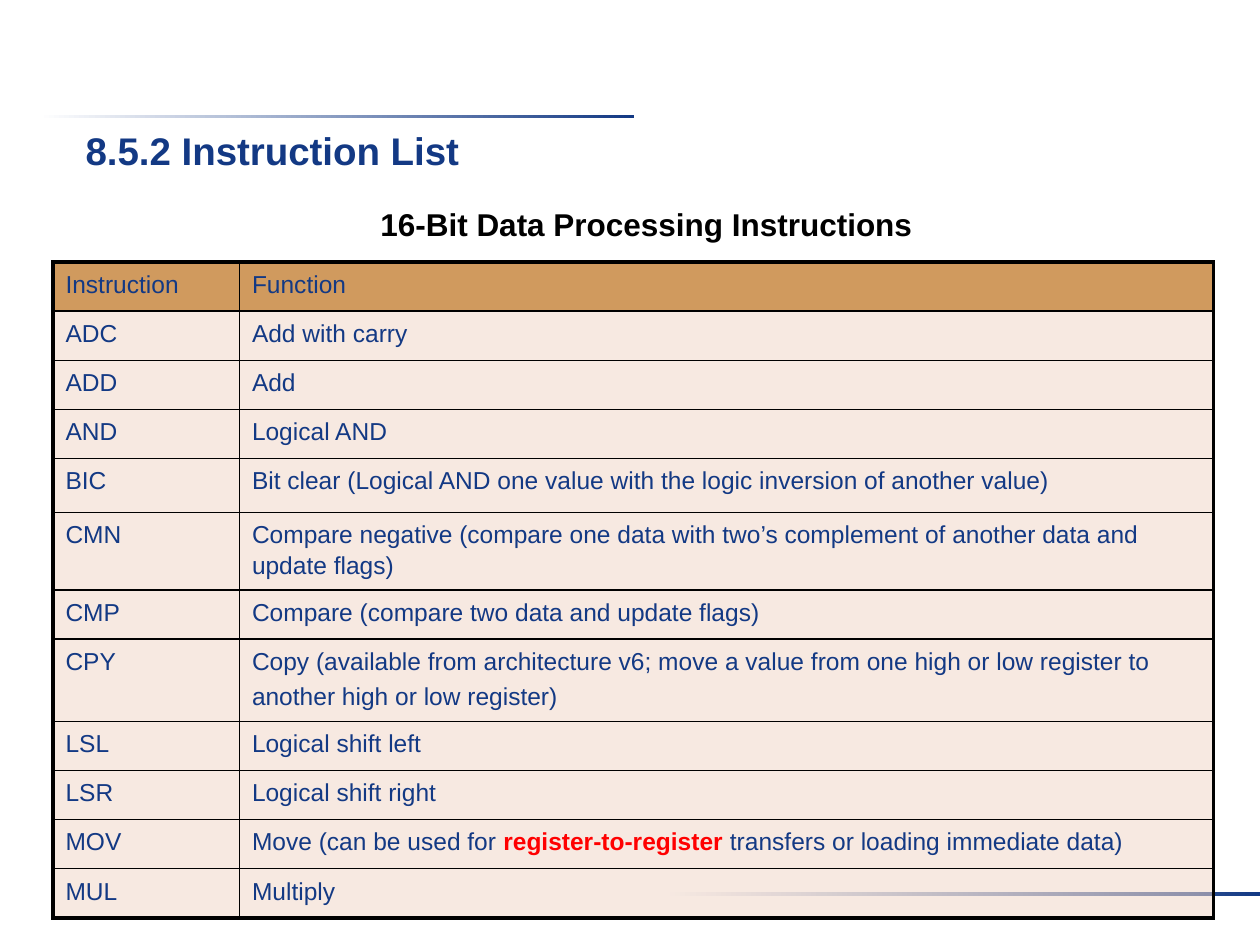
from lxml import etree
from pptx import Presentation
from pptx.dml.color import RGBColor
from pptx.enum import shapes, text
from pptx.oxml.ns import qn
from pptx.util import Inches, Pt

NAVY, BLACK, RED, WHITE = "133984", "000000", "FF0000", "FFFFFF"
HEADER_FILL, BODY_FILL = "D09A5E", "F1D5C5"
THIN, THICK = Pt(1), Pt(2.25)
ROW_HEIGHT = 0.39
TALL_ROWS = {"BIC": 0.43, "CMN": 0.61, "CPY": 0.65}

# A function is a list of paragraphs, each a list of (text, emphasised) runs.
INSTRUCTIONS = [
    ("Instruction", [[("Function", False)]]),
    ("ADC", [[("Add with carry", False)]]),
    ("ADD", [[("Add", False)]]),
    ("AND", [[("Logical AND", False)]]),
    ("BIC", [[("Bit clear (Logical AND one value with the logic inversion of another value)", False)]]),
    ("CMN", [[("Compare negative (compare one data with two’s complement of another data and update flags)", False)]]),
    ("CMP", [[("Compare (compare two data and update flags)", False)]]),
    ("CPY", [[("Copy (available from architecture v6; move a value from one high or low register to", False)],
             [("another high or low register)", False)]]),
    ("LSL", [[("Logical shift left", False)]]),
    ("LSR", [[("Logical shift right", False)]]),
    ("MOV", [[("Move (can be used for ", False), ("register-to-register ", True),
              ("transfers or loading immediate data)", False)]]),
    ("MUL", [[("Multiply", False)]]),
]


def rgb(color):
    return RGBColor.from_string(color)


def set_font(font, size, color, bold=False):
    font.name, font.size, font.bold = "Arial", Pt(size), bold
    font.color.rgb = rgb(color)


def add_rule(slide, left, top, width, height):
    """Draw a bar that fades in from white."""
    rule = slide.shapes.add_shape(shapes.MSO_SHAPE.RECTANGLE, Inches(left), Inches(top),
                                  Inches(width), Inches(height))
    rule.shadow.inherit = False
    rule.line.fill.background()
    rule.fill.gradient()
    rule.fill.gradient_angle = 0
    for stop, color in zip(rule.fill.gradient_stops, (WHITE, NAVY)):
        stop.color.rgb = rgb(color)


def place_heading(slide, left, top, width, height):
    heading = slide.shapes.title
    heading.left, heading.top = Inches(left), Inches(top)
    heading.width, heading.height = Inches(width), Inches(height)
    frame = heading.text_frame
    frame.text = "8.5.2 Instruction List"
    frame.vertical_anchor = text.MSO_ANCHOR.TOP
    paragraph = frame.paragraphs[0]
    paragraph.alignment = text.PP_ALIGN.LEFT
    paragraph.line_spacing = 1.1
    set_font(paragraph.font, 22, NAVY, bold=True)


def add_caption(slide, left, top, width, height):
    caption = slide.shapes.add_textbox(Inches(left), Inches(top), Inches(width), Inches(height))
    frame = caption.text_frame
    frame.word_wrap = False
    frame.auto_size = text.MSO_AUTO_SIZE.SHAPE_TO_FIT_TEXT
    frame.text = "16-Bit Data Processing Instructions"
    frame.paragraphs[0].alignment = text.PP_ALIGN.CENTER
    set_font(frame.paragraphs[0].font, 18, BLACK, bold=True)


def fill_cell(cell, color, opacity=None):
    cell.fill.solid()
    cell.fill.fore_color.rgb = rgb(color)
    if opacity is not None:
        srgb = cell._tc.tcPr.find(".//" + qn("a:srgbClr"))
        etree.SubElement(srgb, qn("a:alpha"), val=str(opacity * 1000))


def set_borders(cell, left, right, top, bottom):
    widths = {"a:lnL": left, "a:lnR": right, "a:lnT": top, "a:lnB": bottom}
    for position, (side, width) in enumerate(widths.items()):
        line = etree.Element(qn(side), w=str(width))
        solid = etree.SubElement(line, qn("a:solidFill"))
        etree.SubElement(solid, qn("a:srgbClr"), val=BLACK)
        cell._tc.tcPr.insert(position, line)


def write_cell(cell, paragraphs):
    frame = cell.text_frame
    for index, runs in enumerate(paragraphs):
        paragraph = frame.add_paragraph() if index else frame.paragraphs[0]
        paragraph.line_spacing = 1.1
        if index:
            paragraph.space_before = Pt(2.8)
        set_font(paragraph.font, 14, NAVY)
        for words, emphasised in runs:
            run = paragraph.add_run()
            run.text = words
            if emphasised:
                run.font.bold = True
                run.font.color.rgb = rgb(RED)


def add_instruction_table(slide, left, top, name_width, function_width):
    heights = [TALL_ROWS.get(name, ROW_HEIGHT) for name, _ in INSTRUCTIONS]
    last = len(INSTRUCTIONS) - 1
    table = slide.shapes.add_table(len(INSTRUCTIONS), 2, Inches(left), Inches(top),
                                   Inches(name_width + function_width),
                                   Inches(sum(heights))).table
    table.horz_banding = False
    table.columns[0].width = Inches(name_width)
    table.columns[1].width = Inches(function_width)
    for row, (name, function) in enumerate(INSTRUCTIONS):
        table.rows[row].height = Inches(heights[row])
        for column, paragraphs in enumerate(([[(name, False)]], function)):
            cell = table.cell(row, column)
            write_cell(cell, paragraphs)
            if row == 0:
                fill_cell(cell, HEADER_FILL)
            else:
                fill_cell(cell, BODY_FILL, opacity=50)
            set_borders(cell,
                        left=THICK if column == 0 else THIN,
                        right=THICK if column == 1 else THIN,
                        top=THICK if row == 0 else THIN,
                        bottom=THICK if row == last else THIN)


def main():
    deck = Presentation()
    deck.slide_width, deck.slide_height = Inches(10), Inches(7.5)
    slide = deck.slides.add_slide(deck.slide_layouts.get_by_name("Title Only"))
    add_rule(slide, 0.31, 0.91, 4.72, 0.03)
    add_rule(slide, 5.28, 7.08, 4.72, 0.03)
    place_heading(slide, 0.58, 0.92, 4.42, 0.63)
    add_caption(slide, 2.92, 1.58, 4.42, 0.4)
    add_instruction_table(slide, 0.42, 2.08, 1.48, 7.73)
    deck.save("out.pptx")


if __name__ == "__main__":
    main()
